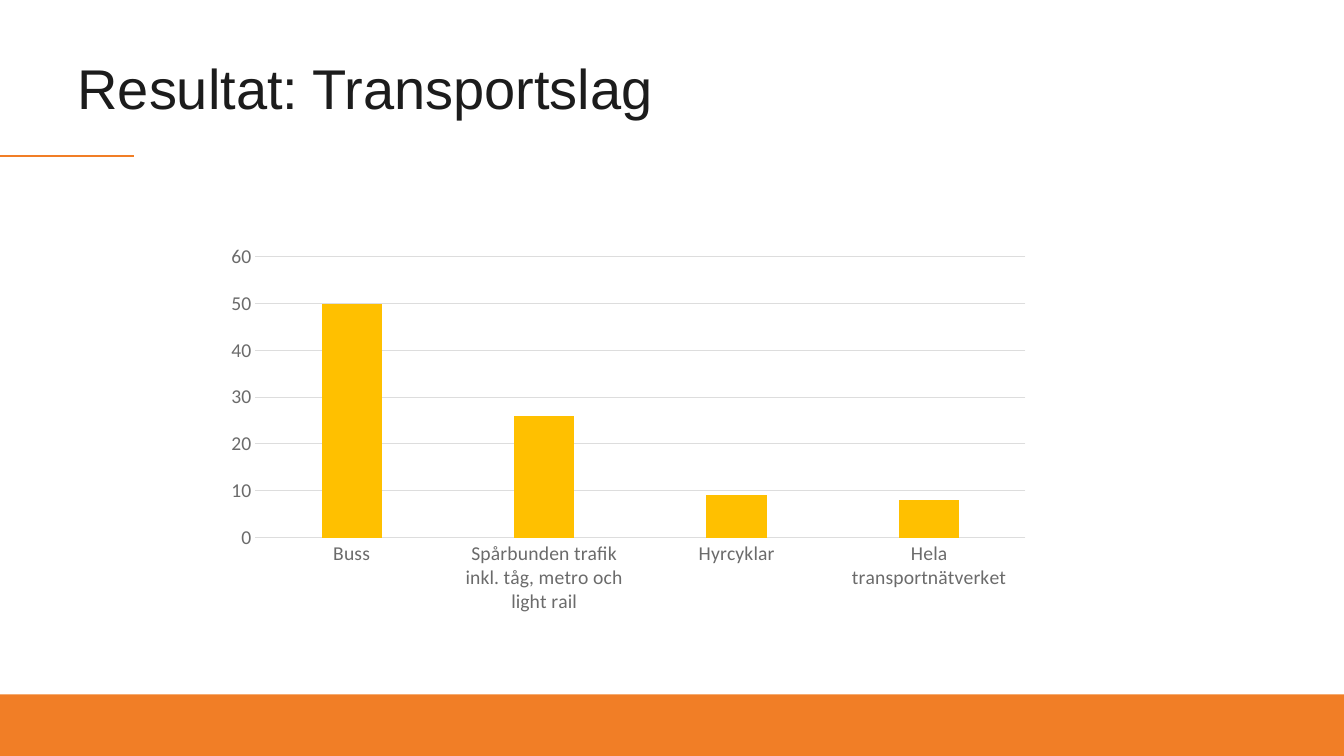
import dataclasses

import lxml.etree
import pptx
import pptx.chart.data
import pptx.dml.color
import pptx.enum.chart
import pptx.enum.shapes
import pptx.enum.text
import pptx.oxml.ns
import pptx.util

Cm = pptx.util.Cm
Pt = pptx.util.Pt

COLOURS = {
    "accent": "F17E26",
    "title": "1C1C1C",
    "label": "6B6B6B",
    "grid": "DDDDDD",
    "bar": "FFC000",
}


@dataclasses.dataclass(frozen=True)
class TransportMode:
    name: str
    count: int


MODES = [
    TransportMode("Buss", 50),
    TransportMode("Spårbunden trafik inkl. tåg, metro och light rail", 26),
    TransportMode("Hyrcyklar", 9),
    TransportMode("Hela transportnätverket", 8),
]


def colour(name: str) -> pptx.dml.color.RGBColor:
    return pptx.dml.color.RGBColor.from_string(COLOURS[name])


def set_values(target, values: dict) -> None:
    for name, value in values.items():
        setattr(target, name, value)


def set_fill(fill, name: str) -> None:
    fill.solid()
    fill.fore_color.rgb = colour(name)


def set_line(line, name: str, width: float) -> None:
    set_fill(line.fill, name)
    line.width = Pt(width)


def set_font(font, face: str, size: int, name: str) -> None:
    set_values(font, {"name": face, "size": Pt(size)})
    font.color.rgb = colour(name)


def add_decoration(page, width: int, height: int) -> None:
    # Footer band
    band_height = Cm(1.55)
    band = page.shapes.add_shape(
        pptx.enum.shapes.MSO_SHAPE.RECTANGLE,
        0, height - band_height, width, band_height)
    band.shadow.inherit = False
    set_fill(band.fill, "accent")
    band.line.fill.background()

    # Rule under the title
    rule = page.shapes.add_connector(
        pptx.enum.shapes.MSO_CONNECTOR.STRAIGHT, 0, Cm(3.93), Cm(3.38), Cm(3.93))
    set_line(rule.line, "accent", 1.5)
    lxml.etree.SubElement(rule.element.spPr, pptx.oxml.ns.qn("a:effectLst"))


def write_title(page, text: str) -> None:
    box = page.shapes.title
    set_values(box, {"left": Cm(1.7), "top": Cm(0.76),
                     "width": Cm(30.48), "height": Cm(3.18)})
    box.text_frame.text = text
    set_values(box.text_frame, {
        "vertical_anchor": pptx.enum.text.MSO_ANCHOR.MIDDLE,
        "word_wrap": True,
    })
    para = box.text_frame.paragraphs[0]
    set_values(para, {"alignment": pptx.enum.text.PP_ALIGN.LEFT,
                      "line_spacing": 0.8})
    set_font(para.runs[0].font, "Arial", 40, "title")


def add_mode_chart(page, modes: list[TransportMode]) -> None:
    chart_data = pptx.chart.data.CategoryChartData()
    chart_data.categories = [mode.name for mode in modes]
    chart_data.add_series("Series 1", [mode.count for mode in modes])
    chart = page.shapes.add_chart(
        pptx.enum.chart.XL_CHART_TYPE.COLUMN_CLUSTERED,
        Cm(5.41), Cm(5.97), Cm(20.85), Cm(9.7), chart_data).chart
    set_values(chart, {"has_legend": False, "has_title": False})
    set_font(chart.font, "Calibri", 14, "title")

    # Bars
    plot = chart.plots[0]
    set_values(plot, {"gap_width": 219, "overlap": -27, "vary_by_categories": False})
    set_fill(plot.series[0].format.fill, "bar")

    # Axes and gridlines
    no_tick = pptx.enum.chart.XL_TICK_MARK.NONE
    for axis in (chart.category_axis, chart.value_axis):
        set_values(axis, {"major_tick_mark": no_tick, "minor_tick_mark": no_tick})
        set_font(axis.tick_labels.font, "Calibri", 14, "label")
    set_line(chart.category_axis.format.line, "grid", 0.75)
    set_values(chart.value_axis, {"minimum_scale": 0, "maximum_scale": 60,
                                  "major_unit": 10, "has_major_gridlines": True})
    chart.value_axis.format.line.fill.background()
    set_line(chart.value_axis.major_gridlines.format.line, "grid", 0.75)


def main() -> None:
    deck = pptx.Presentation()
    set_values(deck, {"slide_width": Cm(33.87), "slide_height": Cm(19.05)})
    page = deck.slides.add_slide(deck.slide_layouts.get_by_name("Title Only"))
    add_decoration(page, deck.slide_width, deck.slide_height)
    write_title(page, "Resultat: Transportslag")
    add_mode_chart(page, MODES)
    deck.save("out.pptx")


if __name__ == "__main__":
    main()
